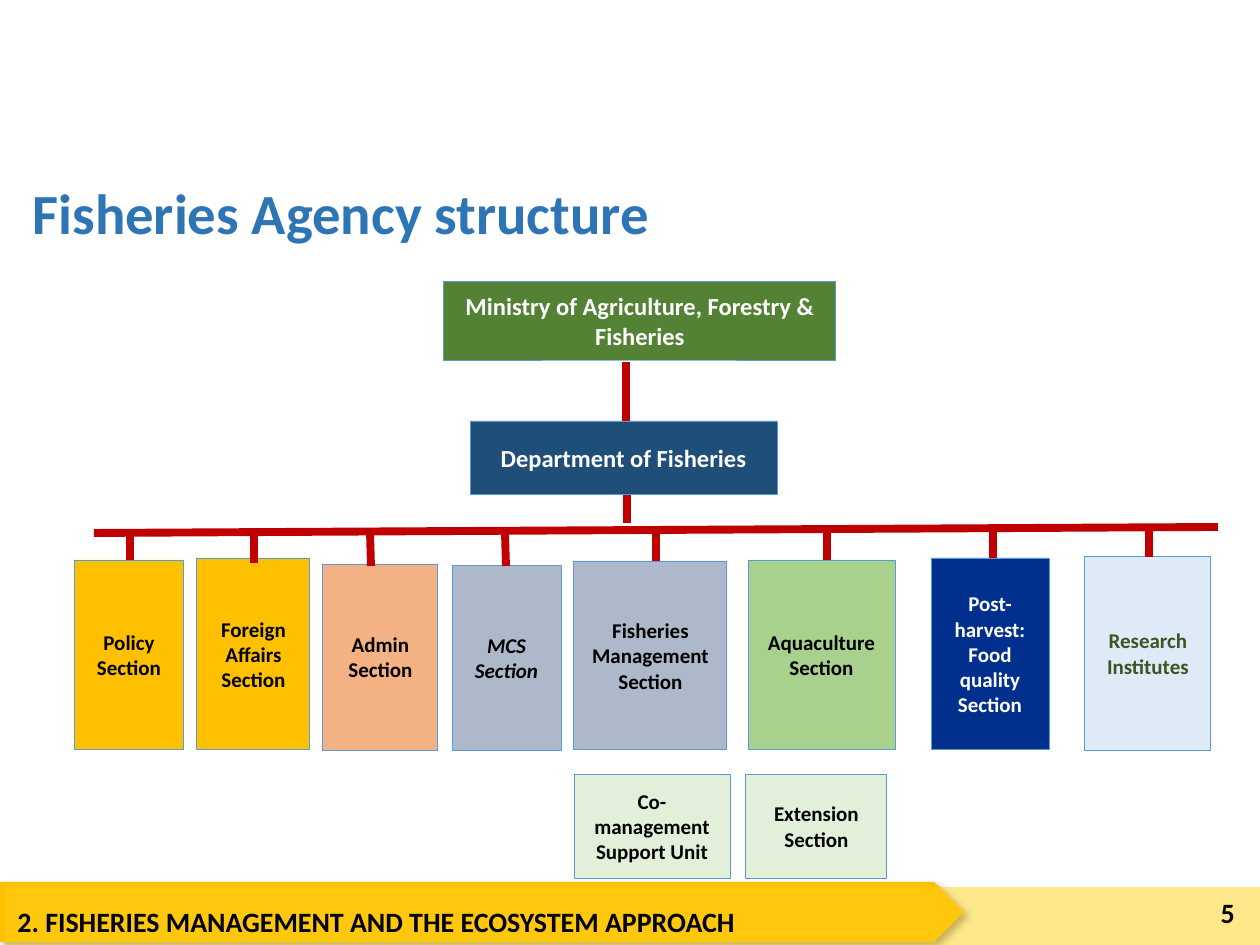
from lxml import etree
from pptx import Presentation
from pptx.dml.color import RGBColor
from pptx.enum.shapes import MSO_CONNECTOR as CONN, MSO_SHAPE as SHAPE
from pptx.enum.text import MSO_ANCHOR as ANCHOR, PP_ALIGN as ALIGN
from pptx.oxml import parse_xml
from pptx.oxml.ns import nsdecls, qn
from pptx.util import Emu, Pt

PX = 914400 / 126
C = {
    "black": "000000", "white": "FFFFFF", "title": "2E75B6", "edge": "5B9BD5",
    "line": "C00000", "gold": "FFC000", "band": "FFD01B", "green": "548235",
    "navy": "1F4E79", "orange": "F4B183", "slate": "ADB9CA", "leaf": "A9D18E",
    "blue": "002F8E", "pale": "DEEBF7", "mint": "E2F0D9", "forest": "385723",
}


def box(kind, x, y, w, h, fill):
    sp = s.shapes.add_shape(kind, *[Emu(round(v * PX)) for v in (x, y, w, h)])
    sp.shadow.inherit = False
    sp.fill.solid()
    sp.fill.fore_color.rgb = RGBColor.from_string(C[fill])
    sp.line.fill.background()
    return sp


def write(sp, text, size, color="black", align=ALIGN.CENTER, italic=None):
    tf = sp.text_frame
    tf.word_wrap = True
    tf.vertical_anchor = ANCHOR.MIDDLE
    tf.text = text
    for p in tf.paragraphs:
        p.alignment = align
        f = p.font
        f.name, f.size, f.bold, f.italic = "Calibri", Pt(size), True, italic
        f.color.rgb = RGBColor.from_string(C[color])
    return tf


prs = Presentation()
prs.slide_width, prs.slide_height = Emu(round(1260 * PX)), Emu(round(945 * PX))
s = prs.slides.add_slide(prs.slide_layouts[5])

arrow = box(SHAPE.PENTAGON, 0, 882, 964, 60, "gold")
arrow._element.spPr.find(qn("a:effectLst")).append(parse_xml(
    f'<a:outerShdw {nsdecls("a")} blurRad="50800" dist="38100" dir="2700000">'
    '<a:srgbClr val="000000"><a:alpha val="40000"/></a:srgbClr></a:outerShdw>'))
band = box(SHAPE.RECTANGLE, 5, 887, 1255, 62, "band")
band_color = band._element.spPr.find(qn("a:solidFill"))[0]
etree.SubElement(band_color, qn("a:alpha")).set("val", "50000")

labels = [
    (5, 895, 926, 52, "2. FISHERIES MANAGEMENT AND THE ECOSYSTEM APPROACH", ALIGN.LEFT),
    (1155, 887, 92, 50, "5", ALIGN.RIGHT),
]
for x, y, w, h, text, align in labels:
    tb = s.shapes.add_textbox(*[Emu(round(v * PX)) for v in (x, y, w, h)])
    write(tb, text, 16, align=align)

title = s.shapes.title
title.left, title.top, title.width, title.height = [
    Emu(round(v * PX)) for v in (20, 110, 698, 154)]
tf = write(title, "Fisheries Agency structure", 32.4, "title", ALIGN.LEFT)
tf.margin_top = Emu(round(64 * PX))
tf.paragraphs[0].line_spacing = 0.9

units = [
    (444, 281, 392, 79, "green", "white", 14, "Ministry of Agriculture, Forestry & Fisheries"),
    (470, 421, 307, 74, "navy", "white", 14, "Department of Fisheries"),
    (74, 560, 110, 190, "gold", "black", 12, "Policy Section"),
    (197, 558, 113, 192, "gold", "black", 12, "Foreign Affairs\nSection"),
    (323, 564, 115, 186, "orange", "black", 12, "Admin Section"),
    (452, 565, 109, 185, "slate", "black", 12, "MCS Section"),
    (574, 561, 153, 189, "slate", "black", 12, "Fisheries Management Section"),
    (748, 560, 147, 190, "leaf", "black", 12, "Aquaculture Section"),
    (931, 558, 118, 192, "blue", "white", 12, "Post-harvest:\nFood quality\nSection"),
    (1085, 556, 126, 194, "pale", "forest", 12, "Research Institutes"),
    (574, 774, 156, 104, "mint", "black", 12, "Co-management Support Unit"),
    (746, 774, 141, 104, "mint", "black", 12, "Extension Section"),
]
for x, y, w, h, fill, color, size, text in units:
    sp = box(SHAPE.RECTANGLE, x, y, w, h, fill)
    sp.line.color.rgb = RGBColor.from_string(C["edge"])
    sp.line.width = Pt(0.5)
    write(sp, text, size, color, italic=True if text == "MCS Section" else None)

links = [
    (626, 362, 626, 421), (627, 495, 627, 523), (1218, 527, 94, 533),
    (130, 532, 130, 560), (254, 534, 254, 563), (370, 530, 371, 566),
    (505, 533, 506, 566), (656, 532, 656, 561), (827, 529, 827, 560),
    (993, 529, 993, 558), (1149, 527, 1149, 557),
]
for ends in links:
    ln = s.shapes.add_connector(CONN.STRAIGHT, *[Emu(round(v * PX)) for v in ends])
    ln.line.color.rgb = RGBColor.from_string(C["line"])
    ln.line.width = Pt(4.5)
    etree.SubElement(ln._element.spPr, qn("a:effectLst"))

prs.save("out.pptx")
